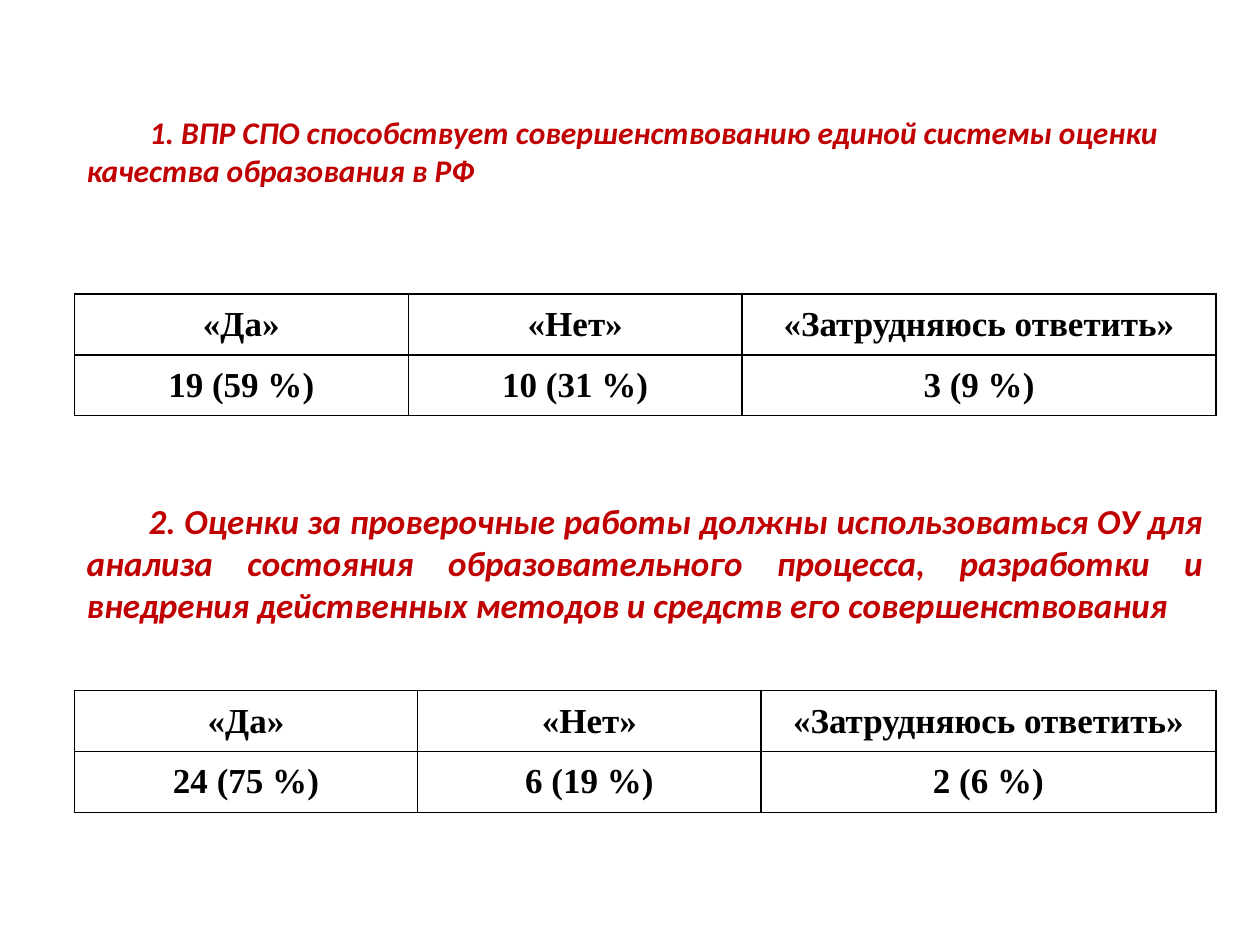
from lxml import etree
from pptx import Presentation
from pptx.dml.color import RGBColor
from pptx.enum.shapes import MSO_SHAPE
from pptx.enum.text import MSO_ANCHOR, PP_ALIGN
from pptx.oxml.ns import qn
from pptx.util import Pt

RECT = MSO_SHAPE.RECTANGLE
MIDDLE = MSO_ANCHOR.MIDDLE
LEFT, CENTER, JUSTIFY = PP_ALIGN.LEFT, PP_ALIGN.CENTER, PP_ALIGN.JUSTIFY

# Content: each survey question with its answers and layout
ANSWERS = ["«Да»", "«Нет»", "«Затрудняюсь ответить»"]
QUESTIONS = [
    dict(text="1. ВПР СПО способствует совершенствованию единой системы оценки "
              "качества образования в РФ",
         size=18, align=LEFT, indent=36, top=60.5, height=51,
         results=["19 (59 %)", "10 (31 %)", "3 (9 %)"],
         table_top=168, answer_width=190.8),
    dict(text="2. Оценки за проверочные работы должны использоваться ОУ для "
              "анализа состояния образовательного процесса, разработки и "
              "внедрения действенных методов и средств его совершенствования",
         size=20, align=JUSTIFY, indent=35.4, top=281.5, height=80,
         results=["24 (75 %)", "6 (19 %)", "2 (6 %)"],
         table_top=394.7, answer_width=196.2),
]

THEME = dict(
    question=RGBColor(0xC0, 0x00, 0x00), cell=RGBColor(0, 0, 0),
    paper=RGBColor(0xFF, 0xFF, 0xFF), border="000000",
    question_font="Calibri", cell_font="Times New Roman", cell_size=20,
)
MARGIN, WIDTH, ROW_HEIGHT = 42.5, 652.3, 34.8
CELL_INSET = 5


def write(tf, text, *, size, font, color, align, italic=False, indent=0):
    p = tf.paragraphs[0]
    p.alignment = align
    if indent:
        p._p.get_or_add_pPr().set("indent", str(Pt(indent)))
    r = p.add_run()
    r.text = text
    r.font.size, r.font.name = Pt(size), font
    r.font.bold, r.font.italic = True, italic
    r.font.color.rgb = color


def add_borders(cell):
    tcPr = cell._tc.get_or_add_tcPr()
    for i, side in enumerate(("a:lnL", "a:lnR", "a:lnT", "a:lnB")):
        ln = etree.Element(qn(side), w=str(Pt(1)))
        fill = etree.SubElement(ln, qn("a:solidFill"))
        etree.SubElement(fill, qn("a:srgbClr"), val=THEME["border"])
        tcPr.insert(i, ln)


def add_question(s, q):
    sp = s.shapes.add_shape(RECT, Pt(MARGIN), Pt(q["top"]), Pt(WIDTH), Pt(q["height"]))
    sp.shadow.inherit = False
    sp.fill.solid()
    sp.fill.fore_color.rgb = THEME["paper"]
    sp.line.color.rgb = THEME["paper"]
    sp.line.width = Pt(0.75)
    tf = sp.text_frame
    tf.word_wrap = True
    tf.vertical_anchor = MIDDLE
    write(tf, q["text"], size=q["size"], font=THEME["question_font"],
          color=THEME["question"], align=q["align"], italic=True, indent=q["indent"])


def add_results(s, q):
    rows = [ANSWERS, q["results"]]
    table = s.shapes.add_table(len(rows), len(ANSWERS), Pt(MARGIN), Pt(q["table_top"]),
                               Pt(WIDTH), Pt(ROW_HEIGHT * len(rows))).table
    table.first_row = table.horz_banding = False
    # The two short answers share a width; the last column takes the rest
    w = q["answer_width"]
    for column, width in zip(table.columns, (w, w, WIDTH - 2 * w)):
        column.width = Pt(width)
    for i, row in enumerate(rows):
        table.rows[i].height = Pt(ROW_HEIGHT)
        for j, text in enumerate(row):
            cell = table.cell(i, j)
            cell.fill.solid()
            cell.fill.fore_color.rgb = THEME["paper"]
            cell.vertical_anchor = MIDDLE
            cell.margin_left = cell.margin_right = Pt(CELL_INSET)
            cell.margin_top = cell.margin_bottom = 0
            add_borders(cell)
            write(cell.text_frame, text, size=THEME["cell_size"], font=THEME["cell_font"],
                  color=THEME["cell"], align=CENTER)


def main():
    prs = Presentation()
    prs.slide_width, prs.slide_height = Pt(720), Pt(540)
    s = prs.slides.add_slide(prs.slide_layouts[6])
    for q in QUESTIONS:
        add_question(s, q)
        add_results(s, q)
    prs.save("out.pptx")


if __name__ == "__main__":
    main()
